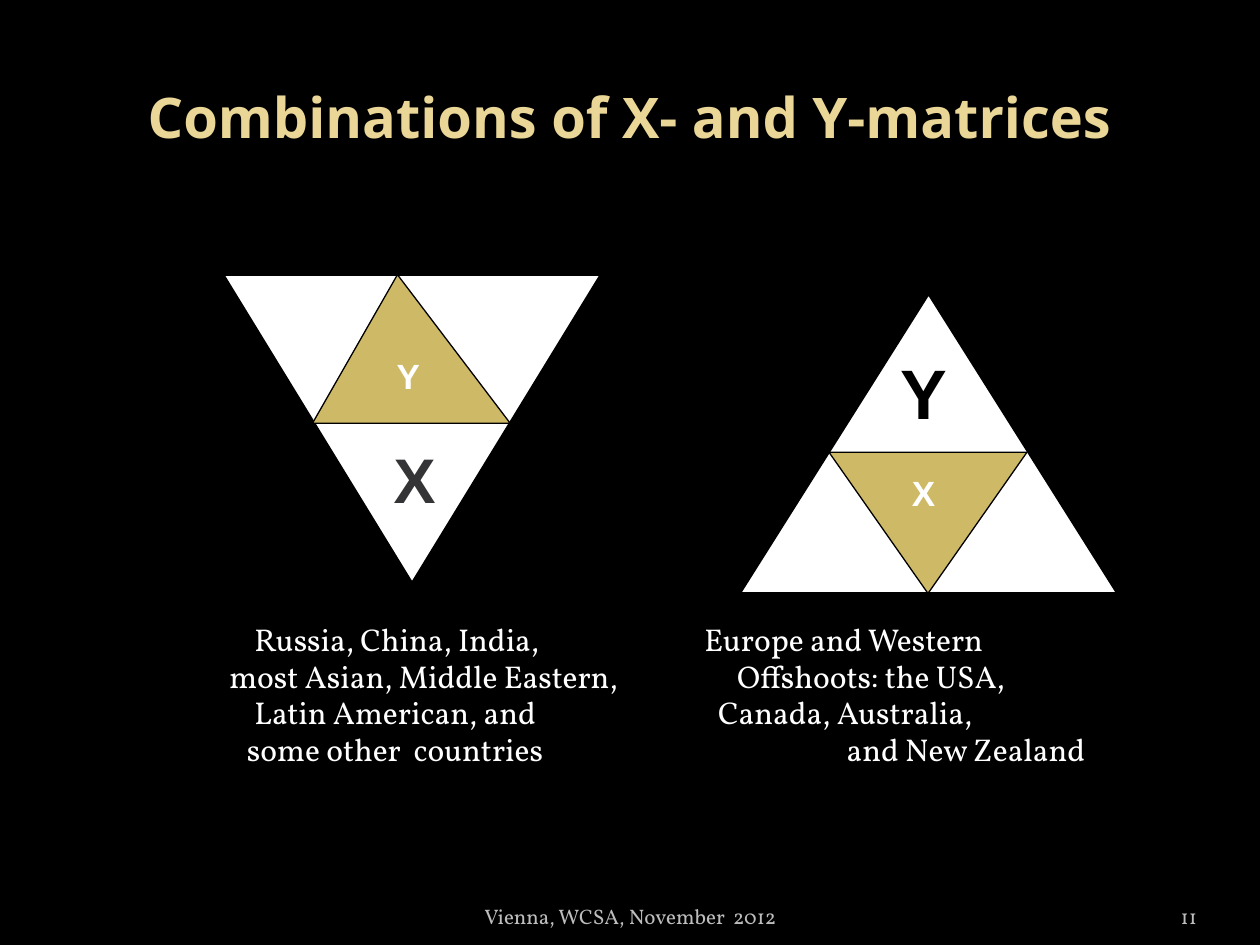
from pptx import Presentation
from pptx.dml.color import RGBColor
from pptx.enum.shapes import MSO_SHAPE
from pptx.enum.text import MSO_ANCHOR, PP_ALIGN
from pptx.util import Inches, Pt

BLACK = RGBColor(0x00, 0x00, 0x00)
WHITE = RGBColor(0xFF, 0xFF, 0xFF)
GOLD = RGBColor(0xCE, 0xB9, 0x66)
PALE_GOLD = RGBColor(0xEA, 0xD6, 0x96)
CHARCOAL = RGBColor(0x34, 0x34, 0x36)
GREY = RGBColor(0xBD, 0xBD, 0xBD)

# Each line is paired with its indent in inches
LEFT_LINES = [
    ("Russia, China, India,", 0.2),
    ("most Asian, Middle Eastern,", 0),
    ("Latin American, and", 0.2),
    ("some other  countries", 0.14),
]
RIGHT_LINES = [
    ("Europe and Western", 0),
    ("Offshoots: the USA,", 0.26),
    ("Canada, Australia,", 0.11),
    ("and New Zealand", 1.13),
]


def format_paragraph(paragraph, font_name, size, color, bold=False, align=PP_ALIGN.LEFT):
    paragraph.alignment = align
    for run in paragraph.runs:
        run.font.name = font_name
        run.font.size = Pt(size)
        run.font.bold = bold
        run.font.color.rgb = color


def add_title(slide, text):
    title = slide.shapes.title
    title.left, title.top = Inches(0.5), Inches(0.3)
    title.width, title.height = Inches(9), Inches(1.25)
    title.text_frame.text = text
    title.text_frame.vertical_anchor = MSO_ANCHOR.MIDDLE
    format_paragraph(title.text_frame.paragraphs[0], "Open Sans", 32, PALE_GOLD,
                     True, PP_ALIGN.CENTER)


def add_triangle(slide, left, top, width, height, color, line_width,
                 apex=0.5, inverted=False):
    triangle = slide.shapes.add_shape(
        MSO_SHAPE.ISOSCELES_TRIANGLE,
        Inches(left), Inches(top), Inches(width), Inches(height))
    triangle.adjustments[0] = apex
    triangle.rotation = 180 if inverted else 0
    triangle.shadow.inherit = False
    triangle.fill.solid()
    triangle.fill.fore_color.rgb = color
    triangle.line.color.rgb = BLACK
    triangle.line.width = Pt(line_width)


def add_text_box(slide, left, top, width, height, anchor):
    box = slide.shapes.add_textbox(
        Inches(left), Inches(top), Inches(width), Inches(height))
    text_frame = box.text_frame
    text_frame.word_wrap = True
    text_frame.vertical_anchor = anchor
    text_frame.margin_left = text_frame.margin_right = 0
    return text_frame


def add_letter(slide, letter, center_x, center_y, size, color):
    side = 0.8
    text_frame = add_text_box(slide, center_x - side / 2, center_y - side / 2,
                              side, side, MSO_ANCHOR.MIDDLE)
    text_frame.text = letter
    format_paragraph(text_frame.paragraphs[0], "Arial", size, color, True, PP_ALIGN.CENTER)


def add_caption(slide, left, lines):
    text_frame = add_text_box(slide, left, 4.88, 3.5, 1.3, MSO_ANCHOR.TOP)
    text_frame.text = "\n".join(text for text, _ in lines)
    for paragraph, (_, indent) in zip(text_frame.paragraphs, lines):
        format_paragraph(paragraph, "Vollkorn", 18, WHITE)
        paragraph.line_spacing = Pt(21)
        properties = paragraph._p.get_or_add_pPr()
        properties.set("marL", str(Inches(indent)))
        properties.set("indent", "0")


def add_footer(slide, text, left, width, align):
    text_frame = add_text_box(slide, left, 7.02, width, 0.4, MSO_ANCHOR.BOTTOM)
    text_frame.text = text
    format_paragraph(text_frame.paragraphs[0], "Vollkorn", 12, GREY, align=align)


def main():
    presentation = Presentation()
    presentation.slide_width, presentation.slide_height = Inches(10), Inches(7.5)
    slide = presentation.slides.add_slide(presentation.slide_layouts[5])
    slide.background.fill.solid()
    slide.background.fill.fore_color.rgb = BLACK
    add_title(slide, "Combinations of X- and Y-matrices")

    # Left triangles and caption
    add_triangle(slide, 1.77, 2.18, 3, 2.45, WHITE, 1.5, inverted=True)
    add_triangle(slide, 2.48, 2.18, 1.57, 1.18, GOLD, 0.75, apex=0.43)
    add_letter(slide, "Y", 3.24, 2.98, 20, WHITE)
    add_letter(slide, "X", 3.29, 3.8, 36, CHARCOAL)
    add_caption(slide, 1.82, LEFT_LINES)

    # Right triangles and caption
    add_triangle(slide, 5.87, 2.33, 3, 2.38, WHITE, 1.5)
    add_triangle(slide, 6.58, 3.59, 1.57, 1.12, GOLD, 0.75, inverted=True)
    add_letter(slide, "Y", 7.33, 3.11, 40, BLACK)
    add_letter(slide, "X", 7.33, 3.91, 20, WHITE)
    add_caption(slide, 5.59, RIGHT_LINES)

    # Footer and slide number
    add_footer(slide, "Vienna, WCSA, November  2012", 3.42, 3.17, PP_ALIGN.CENTER)
    add_footer(slide, "11", 8.67, 0.83, PP_ALIGN.RIGHT)

    presentation.save("out.pptx")


if __name__ == "__main__":
    main()
